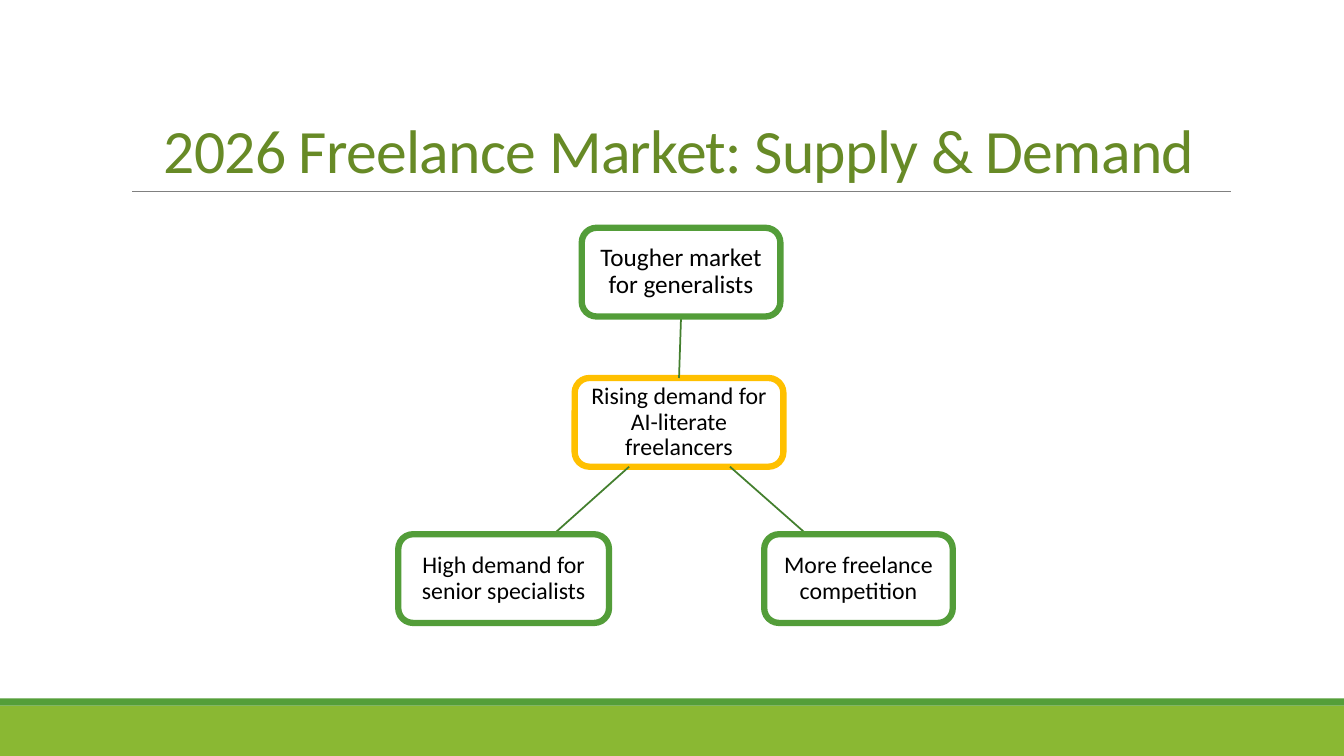
from dataclasses import dataclass

from lxml.etree import SubElement
from pptx import Presentation
from pptx.dml.color import RGBColor as RGB
from pptx.enum.shapes import MSO_CONNECTOR as Link, MSO_SHAPE as Shape
from pptx.enum.text import MSO_ANCHOR as Anchor, PP_ALIGN as Align
from pptx.oxml.ns import qn
from pptx.util import Inches, Pt


@dataclass(frozen=True)
class Theme:
    font: str = "Calibri"
    lime: RGB = RGB(0x8A, 0xB8, 0x33)
    green: RGB = RGB(0x54, 0x9E, 0x39)
    edge: RGB = RGB(0x53, 0x9D, 0x39)
    gold: RGB = RGB(0xFF, 0xC0, 0x00)
    link: RGB = RGB(0x43, 0x7F, 0x2E)
    rule: RGB = RGB(0x80, 0x80, 0x80)
    title: RGB = RGB(0x67, 0x8A, 0x26)
    ink: RGB = RGB(0, 0, 0)
    paper: RGB = RGB(0xFF, 0xFF, 0xFF)
    head: int = 44
    large: int = 18
    body: int = 17


THEME = Theme()
BOX_H = 0.88
TOP_Y, MID_Y, LOW_Y = 2.26, 3.75, 5.3


def write(frame, text, size, color, space):
    """Fill a frame with one centred paragraph and return its run."""
    frame.word_wrap = True
    para = frame.paragraphs[0]
    para.text = text
    para.alignment = Align.CENTER
    para.line_spacing = space
    run = para.runs[0]
    run.font.name = THEME.font
    run.font.size = Pt(size)
    run.font.color.rgb = color
    return run


def add_band(slide, top, height, color):
    band = slide.shapes.add_shape(
        Shape.RECTANGLE, 0, Inches(top), Inches(13.33), Inches(height))
    band.shadow.inherit = False
    band.fill.solid()
    band.fill.fore_color.rgb = color
    band.line.fill.background()


def add_line(slide, start, end, color, width):
    line = slide.shapes.add_connector(
        Link.STRAIGHT, *map(Inches, (*start, *end)))
    line.line.color.rgb = color
    line.line.width = Pt(width)
    SubElement(line._element.spPr, qn("a:effectLst"))
    return line


def add_title(slide, text):
    box = slide.shapes.add_textbox(
        Inches(1.09), Inches(0.31), Inches(11.29), Inches(1.59))
    box.text_frame.vertical_anchor = Anchor.BOTTOM
    run = write(box.text_frame, text, THEME.head, THEME.title, 0.85)
    run._r.get_or_add_rPr().set("spc", "-50")


def add_box(slide, left, top, width, text, size=THEME.body, edge=THEME.edge):
    box = slide.shapes.add_shape(
        Shape.ROUNDED_RECTANGLE,
        Inches(left), Inches(top), Inches(width), Inches(BOX_H))
    box.shadow.inherit = False
    box.fill.solid()
    box.fill.fore_color.rgb = THEME.paper
    box.line.color.rgb = edge
    box.line.width = Pt(4.5)
    frame = box.text_frame
    frame.vertical_anchor = Anchor.MIDDLE
    frame.margin_left = frame.margin_right = Inches(0.05)
    frame.margin_top = frame.margin_bottom = Inches(0.05)
    write(frame, text, size, THEME.ink, 0.9)
    return box


def main():
    deck = Presentation()
    deck.slide_width, deck.slide_height = Inches(13.33), Inches(7.5)
    slide = deck.slides.add_slide(deck.slide_layouts[6])

    add_band(slide, 7, 0.5, THEME.lime)
    add_band(slide, 6.93, 0.07, THEME.green)
    add_line(slide, (1.31, 1.9), (12.21, 1.9), THEME.rule, 0.5)
    add_title(slide, "2026 Freelance Market: Supply & Demand")

    hub = add_box(slide, 5.7, MID_Y, 2.07,
                  "Rising demand for AI-literate freelancers", edge=THEME.gold)
    stem = add_line(slide, (6.74, MID_Y), (6.75, TOP_Y + BOX_H),
                    THEME.link, 1.25)
    top = add_box(slide, 5.77, TOP_Y, 1.97,
                  "Tougher market for generalists", THEME.large)
    stem.begin_connect(hub, 0)
    stem.end_connect(top, 2)

    for start, end, left, width, text in (
        (7.24, 8, 7.58, 1.87, "More freelance competition"),
        (6.24, 5.49, 3.95, 2.09, "High demand for senior specialists"),
    ):
        add_line(slide, (start, MID_Y + BOX_H), (end, LOW_Y),
                 THEME.link, 1.25)
        add_box(slide, left, LOW_Y, width, text)

    deck.save("out.pptx")


if __name__ == "__main__":
    main()
